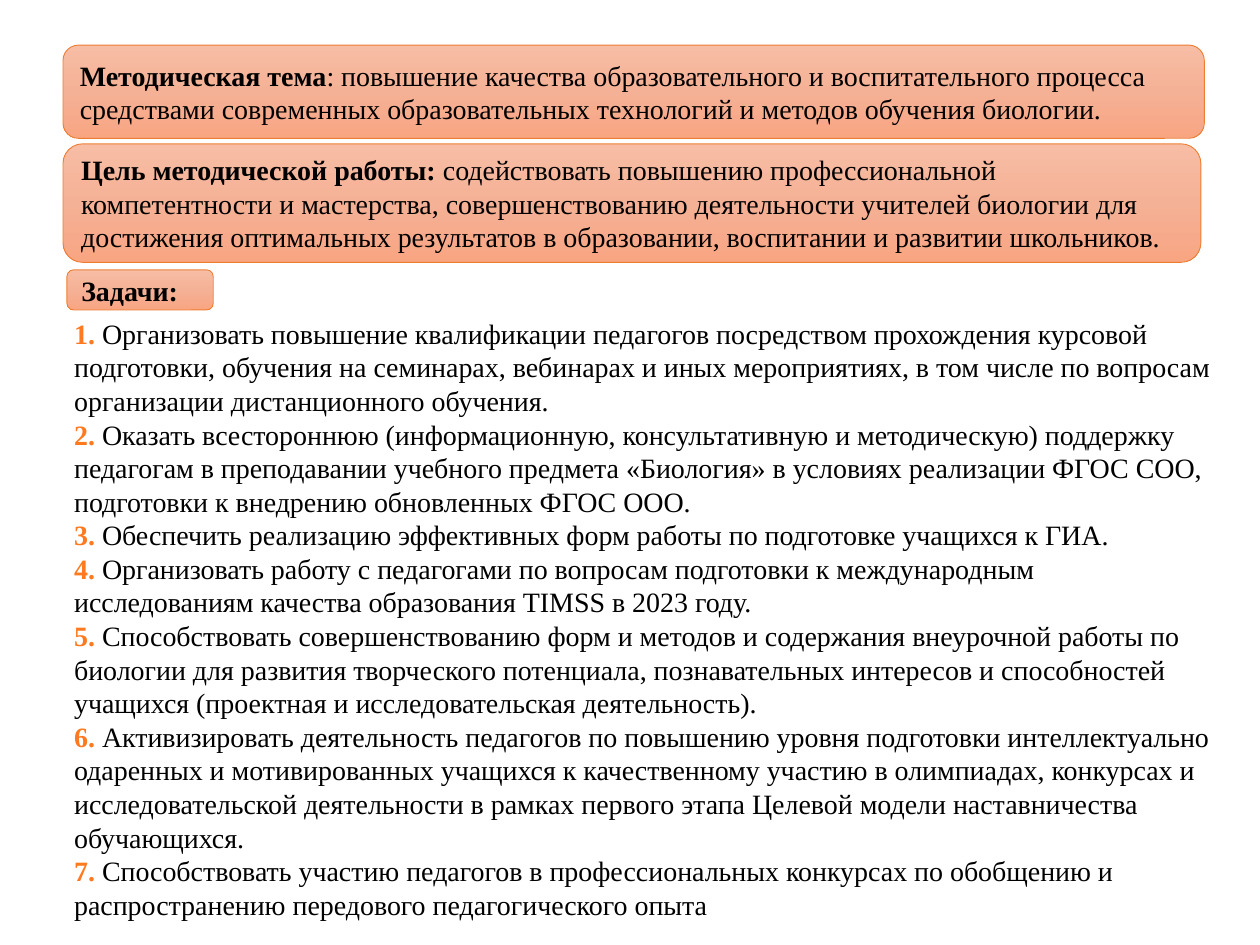
import copy

import lxml.etree
import pptx
import pptx.dml.color
import pptx.enum.shapes
import pptx.enum.text
import pptx.oxml.ns
import pptx.util
from pptx.util import Cm

BLACK = "000000"
ORANGE = "FF7A1F"
PANEL_LINE = "ED7D31"
PANEL_STOPS = [(0, "F7BDA5"), (0.5, "F5B196"), (1, "F8A582")]

PANELS = [
    ((1.27, 0.91, 23.01, 1.88), "Методическая тема",
     ": повышение качества образовательного и воспитательного процесса средствами "
     "современных образовательных технологий и методов обучения биологии."),
    ((1.27, 2.9, 22.94, 2.39), "Цель методической работы:",
     " содействовать повышению профессиональной компетентности и мастерства, "
     "совершенствованию деятельности учителей биологии для достижения оптимальных "
     "результатов в образовании, воспитании и развитии школьников."),
    ((1.35, 5.44, 2.95, 0.81), "Задачи:", ""),
]

TASKS_BOX = (1.24, 6.25, 23.6, 12.57)
TASKS = [
    "Организовать повышение квалификации педагогов посредством прохождения курсовой "
    "подготовки, обучения на семинарах, вебинарах и иных мероприятиях, в том числе по "
    "вопросам организации дистанционного обучения.",
    "Оказать всестороннюю (информационную, консультативную и методическую) поддержку "
    "педагогам в преподавании учебного предмета «Биология» в условиях реализации ФГОС СОО, "
    "подготовки к внедрению обновленных ФГОС ООО.",
    "Обеспечить реализацию эффективных форм работы по подготовке учащихся к ГИА.",
    "Организовать работу с педагогами по вопросам подготовки к международным "
    "исследованиям качества образования TIMSS в 2023 году.",
    "Способствовать совершенствованию форм и методов и содержания внеурочной работы по "
    "биологии для развития творческого потенциала, познавательных интересов и способностей "
    "учащихся (проектная и исследовательская деятельность).",
    "Активизировать деятельность педагогов по повышению уровня подготовки интеллектуально "
    "одаренных и мотивированных учащихся к качественному участию в олимпиадах, конкурсах и "
    "исследовательской деятельности в рамках первого этапа Целевой модели наставничества "
    "обучающихся.",
    "Способствовать участию педагогов в профессиональных конкурсах по обобщению и "
    "распространению передового педагогического опыта",
]


def color(hex_string):
    """Turn a hex string into a colour."""
    return pptx.dml.color.RGBColor.from_string(hex_string)


def write_paragraph(paragraph, lead, body, lead_color=BLACK):
    """Write a bold lead followed by plain text."""
    paragraph.alignment = pptx.enum.text.PP_ALIGN.LEFT
    paragraph.font.name = "Times New Roman"
    paragraph.font.size = pptx.util.Pt(16)
    for text, bold, hex_string in ((lead, True, lead_color), (body, False, BLACK)):
        if text:
            run = paragraph.add_run()
            run.text = text
            run.font.bold = bold
            run.font.color.rgb = color(hex_string)


def fill_gradient(fill):
    """Apply the vertical panel gradient."""
    fill.gradient()
    fill.gradient_angle = 270
    first_stop = fill._fill._gradFill.gsLst[0]
    first_stop.addnext(copy.deepcopy(first_stop))
    for stop, (position, hex_string) in zip(fill.gradient_stops, PANEL_STOPS):
        stop.position = position
        stop.color.rgb = color(hex_string)


def add_panel(slide, box, lead, body):
    """Add a rounded gradient panel with its statement."""
    panel = slide.shapes.add_shape(
        pptx.enum.shapes.MSO_SHAPE.ROUNDED_RECTANGLE, *map(Cm, box))
    panel.shadow.inherit = False
    fill_gradient(panel.fill)
    panel.line.color.rgb = color(PANEL_LINE)
    panel.line.width = pptx.util.Pt(0.5)
    frame = panel.text_frame
    frame.word_wrap = True
    frame.vertical_anchor = pptx.enum.text.MSO_ANCHOR.MIDDLE
    write_paragraph(frame.paragraphs[0], lead, body)


def add_tasks(slide, box, tasks):
    """Place the numbered tasks in the body placeholder."""
    body = slide.placeholders[1]
    body.left, body.top, body.width, body.height = map(Cm, box)
    frame = body.text_frame
    frame.word_wrap = True
    frame.auto_size = pptx.enum.text.MSO_AUTO_SIZE.SHAPE_TO_FIT_TEXT
    frame.vertical_anchor = pptx.enum.text.MSO_ANCHOR.TOP
    for number, task in enumerate(tasks, 1):
        paragraph = frame.paragraphs[0] if number == 1 else frame.add_paragraph()
        properties = paragraph._p.get_or_add_pPr()
        properties.set("marL", "0")
        properties.set("indent", "0")
        lxml.etree.SubElement(properties, pptx.oxml.ns.qn("a:buNone"))
        paragraph.space_before = pptx.util.Pt(0)
        write_paragraph(paragraph, f"{number}. ", task, ORANGE)


def main():
    """Build and save the slide."""
    presentation = pptx.Presentation()
    presentation.slide_width = Cm(25.4)
    presentation.slide_height = Cm(19.05)
    slide = presentation.slides.add_slide(presentation.slide_layouts[1])
    title = slide.shapes.title.element
    title.getparent().remove(title)
    for box, lead, body in PANELS:
        add_panel(slide, box, lead, body)
    add_tasks(slide, TASKS_BOX, TASKS)
    presentation.save("out.pptx")


if __name__ == "__main__":
    main()
